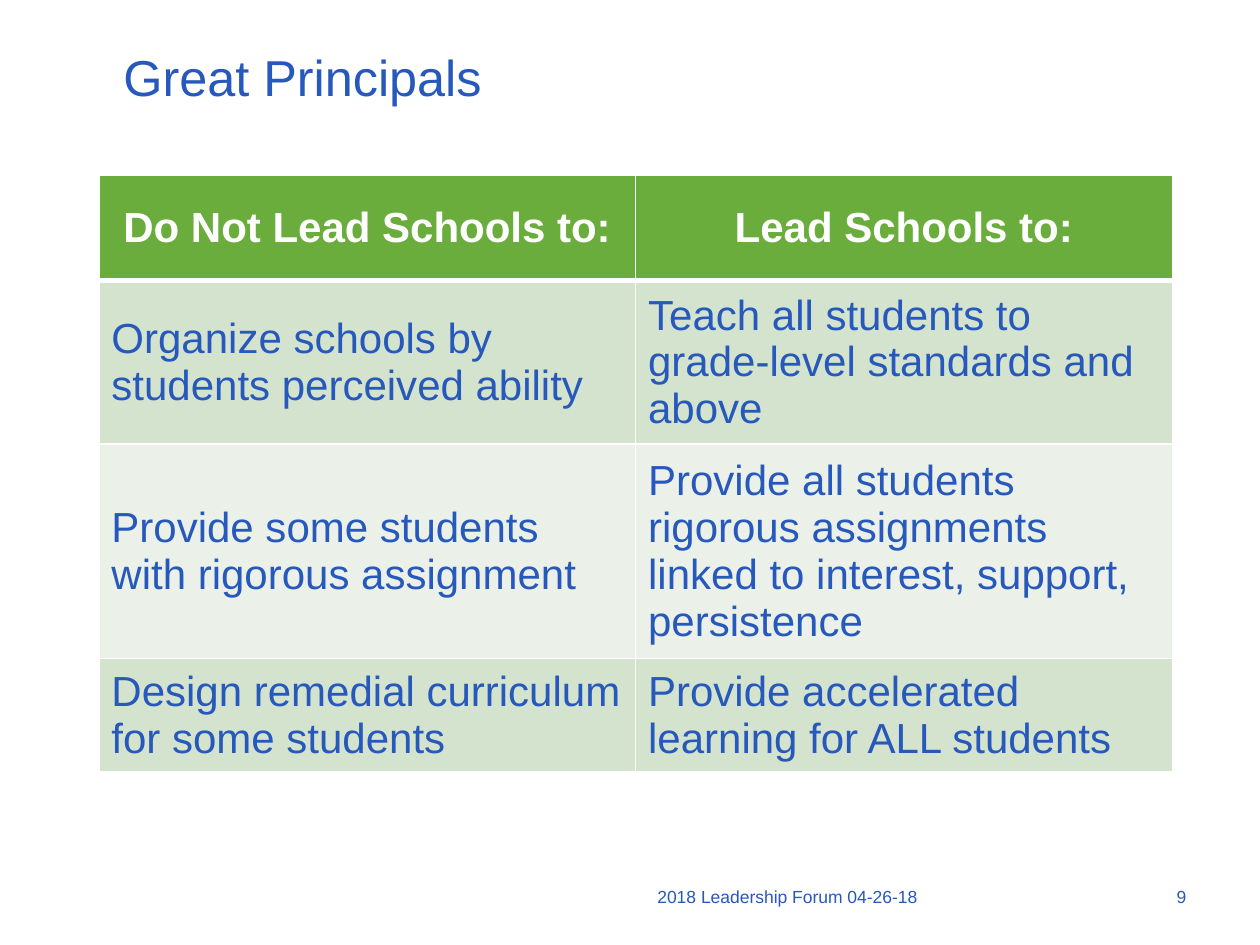
from lxml.etree import SubElement
from pptx import Presentation
from pptx.dml.color import RGBColor
from pptx.enum.text import MSO_ANCHOR, PP_ALIGN
from pptx.oxml.ns import qn
from pptx.util import Pt

COLORS = {"blue": "2758BC", "green": "6AAD3C", "band": "D4E3CE",
          "pale": "EBF1E8", "white": "FFFFFF"}


def write(frame, text, size=24, color="blue", bold=False,
          align=PP_ALIGN.LEFT, anchor=MSO_ANCHOR.MIDDLE):
    frame.word_wrap = True
    frame.vertical_anchor = anchor
    para = frame.paragraphs[0]
    para.alignment = align
    span = para.add_run()
    span.text = text
    span.font.name = "Arial"
    span.font.size = Pt(size)
    span.font.bold = bold
    span.font.color.rgb = RGBColor.from_string(COLORS[color])


def add_border(cell, side, width):
    line = SubElement(cell._tc.get_or_add_tcPr(), qn(f"a:{side}"), w=str(Pt(width)))
    fill = SubElement(line, qn("a:solidFill"))
    SubElement(fill, qn("a:srgbClr"), val=COLORS["white"])


deck = Presentation()
deck.slide_width, deck.slide_height = Pt(720), Pt(540)
page = deck.slides.add_slide(deck.slide_layouts[6])

# Title, footer and page number
texts = [
    ("Great Principals", (63.4, 21.6, 605.5, 44.6), 28.8, MSO_ANCHOR.MIDDLE),
    ("2018 Leadership Forum 04-26-18", (368.6, 502.6, 297.4, 32.4), 10, MSO_ANCHOR.TOP),
    ("9", (665.3, 502.6, 41, 32.4), 10, MSO_ANCHOR.TOP),
]
for text, place, size, anchor in texts:
    box = page.shapes.add_textbox(*map(Pt, place))
    write(box.text_frame, text, size=size, anchor=anchor)

# Comparison table
rows = [
    ("Do Not Lead Schools to:", "Lead Schools to:"),
    ("Organize schools by students perceived ability",
     "Teach all students to grade-level standards and above"),
    ("Provide some students with rigorous assignment",
     "Provide all students rigorous assignments linked to interest, support, persistence"),
    ("Design remedial curriculum for some students",
     "Provide accelerated learning for ALL students"),
]
row_heights = [59.8, 63.4, 90.7, 63.4]
row_fills = ["green", "band", "pale", "band"]

table_frame = page.shapes.add_table(4, 2, Pt(56.5), Pt(100.4), Pt(613.4), Pt(340.6))
table = table_frame.table
for row_index, row in enumerate(rows):
    table.rows[row_index].height = Pt(row_heights[row_index])
    header = row_index == 0
    for column_index, text in enumerate(row):
        cell = table.cell(row_index, column_index)
        write(cell.text_frame, text, bold=header,
              color="white" if header else "blue",
              align=PP_ALIGN.CENTER if header else PP_ALIGN.LEFT)
        cell.vertical_anchor = MSO_ANCHOR.MIDDLE
        # Borders come before the fill in the cell properties
        for side in ("lnL", "lnR", "lnT", "lnB"):
            thick = (header and side == "lnB") or (row_index == 1 and side == "lnT")
            add_border(cell, side, 3 if thick else 1)
        cell.fill.solid()
        cell.fill.fore_color.rgb = RGBColor.from_string(COLORS[row_fills[row_index]])
table_frame.height = Pt(340.6)

deck.save("out.pptx")
